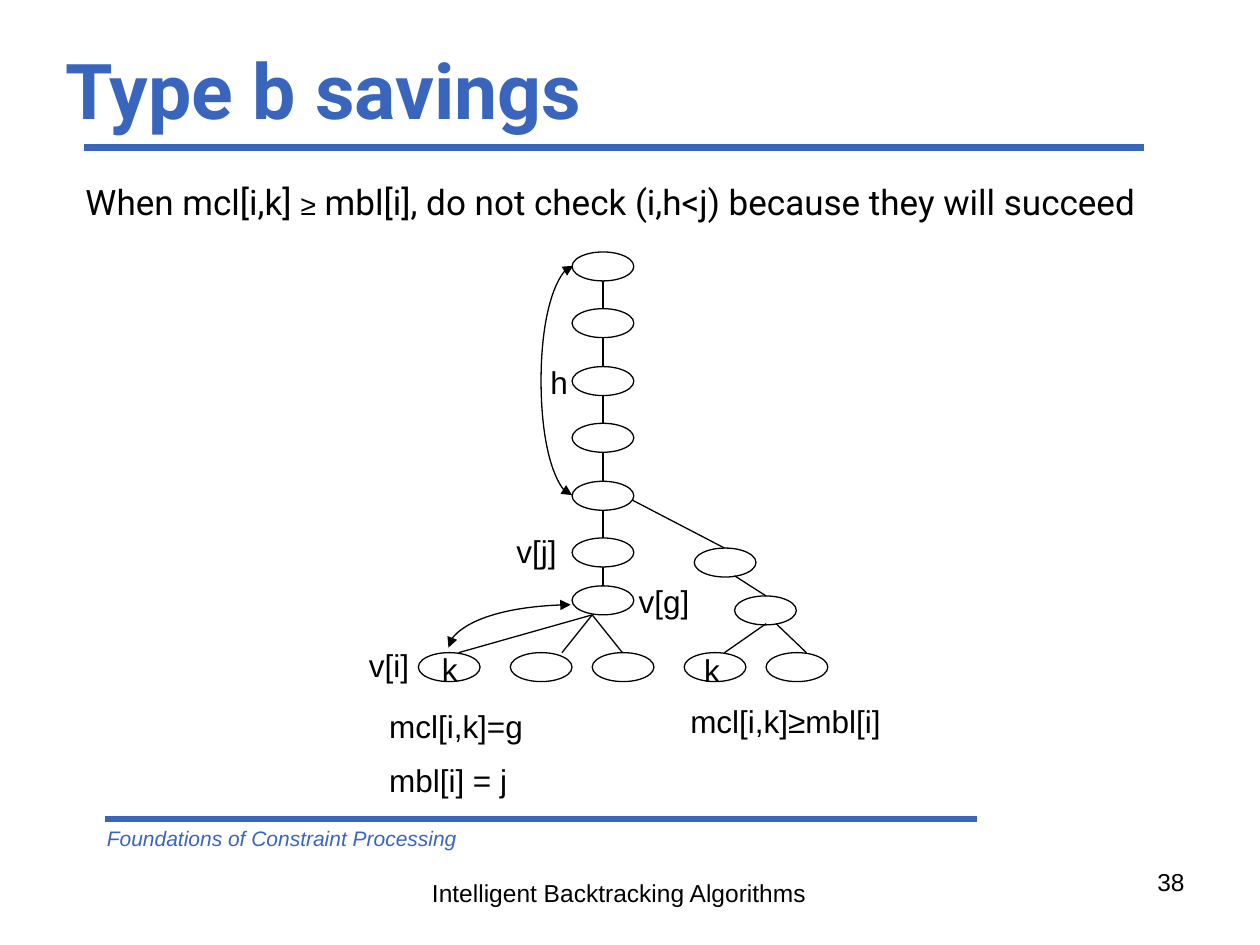
"""Builds the slide on type b savings in backtracking search."""
from lxml import etree
from pptx import Presentation
from pptx import util as u
from pptx.dml.color import RGBColor
from pptx.enum import shapes, text
from pptx.oxml.ns import qn

COLORS = {"blue": "3A65BC", "black": "000000"}
NODE_W, NODE_H = 0.49, 0.23
SPINE_X = 4.54
SPINE_TOPS = [2, 2.45, 2.91, 3.36, 3.82, 4.27, 4.65]
LEAF_TOP = 5.18
LEAF_LEFTS = [3.32, 4.05, 4.7, 5.43, 6.08]
BRANCH_NODES = [(5.51, 4.35), (5.83, 4.73)]
EDGES = [
    (4.7, 4.88, 3.64, LEAF_TOP),
    (4.7, 4.88, 4.46, LEAF_TOP),
    (4.7, 4.88, 4.94, LEAF_TOP),
    (5.02, 3.97, 5.75, 4.35),
    (5.83, 4.57, 6.08, 4.73),
    (6.08, 4.95, 5.75, LEAF_TOP),
    (6.16, 4.95, 6.4, LEAF_TOP),
]
RULES = [(0.67, 1.17, 9.08, 1.17), (0.83, 6.5, 7.75, 6.5)]
LABELS = [
    ("h", 4.27, 2.83, 0.34),
    ("v[i]", 2.83, 5.08, 0.52),
    ("v[j]", 4, 4.17, 0.52),
    ("v[g]", 4.97, 4.57, 0.6),
    ("k", 5.49, 5.12, 0.33),
    ("k", 3.41, 5.11, 0.33),
    ("mcl[i,k]≥mbl[i]", 5.38, 5.52, 1.71),
]
RESULTS = ["mcl[i,k]=g", "mbl[i] = j"]
STATEMENT = [
    ("When mcl[i,k] ", 20, "Roboto"),
    ("≥", 16, "Arial"),
    (" mbl[i], do not check (i,h<j) because they will succeed", 20, "Roboto"),
]


def style(font, size, name="Arial", color="black", bold=False, italic=False):
    font.size, font.name, font.bold, font.italic = u.Pt(size), name, bold, italic
    font.color.rgb = RGBColor.from_string(COLORS[color])


def add_text(s, lines, box, size=18, wrap=True, **look):
    tf = s.shapes.add_textbox(*map(u.Inches, box)).text_frame
    tf.word_wrap = wrap
    for i, line in enumerate(lines):
        p = tf.add_paragraph() if i else tf.paragraphs[0]
        p.text = line
        if i:
            p.space_before = u.Pt(9.5)
        style(p.font, size, **look)
    return tf


def add_node(s, left, top):
    sp = s.shapes.add_shape(shapes.MSO_SHAPE.OVAL, *map(u.Inches, (left, top, NODE_W, NODE_H)))
    sp.shadow.inherit = False
    sp.fill.background()
    sp.line.color.rgb = RGBColor.from_string(COLORS["black"])
    sp.line.width = u.Pt(0.75)


def add_line(s, ends, kind=shapes.MSO_CONNECTOR.STRAIGHT, color="black", width=0.75):
    line = s.shapes.add_connector(kind, *map(u.Inches, ends))
    line.line.color.rgb = RGBColor.from_string(COLORS[color])
    line.line.width = u.Pt(width)
    etree.SubElement(line._element.spPr, qn("a:effectLst"))
    return line


def add_curve(s, ends, preset, adjust=None):
    line = add_line(s, ends, shapes.MSO_CONNECTOR.CURVE)
    geom = line._element.spPr.find(qn("a:prstGeom"))
    geom.set("prst", preset)
    if adjust is not None:
        guides = geom.find(qn("a:avLst"))
        etree.SubElement(guides, qn("a:gd"), name="adj1", fmla=f"val {adjust}")
    ln = line.line._get_or_add_ln()
    for end in ("a:headEnd", "a:tailEnd"):
        etree.SubElement(ln, qn(end), type="triangle")


def main():
    prs = Presentation()
    prs.slide_width, prs.slide_height = u.Inches(10), u.Inches(7.5)
    s = prs.slides.add_slide(prs.slide_layouts[6])

    for rule in RULES:
        add_line(s, rule, color="blue", width=4)
    add_text(s, ["Foundations of Constraint Processing"], (0.75, 6.5, 5.25, 0.3),
             12, color="blue", italic=True)
    add_text(s, ["Intelligent Backtracking Algorithms"], (3.33, 6.92, 3.19, 0.34), 14)
    tf = add_text(s, ["38"], (7.17, 6.83, 2.33, 0.52), 14)
    tf.paragraphs[0].alignment = text.PP_ALIGN.RIGHT
    tf = add_text(s, ["Type b savings"], (0.42, 0.33, 9, 0.75), 44,
                  name="Roboto", color="blue", bold=True)
    tf.vertical_anchor = text.MSO_ANCHOR.MIDDLE

    spine = [(SPINE_X, top) for top in SPINE_TOPS]
    leaves = [(left, LEAF_TOP) for left in LEAF_LEFTS]
    for left, top in spine + leaves + BRANCH_NODES:
        add_node(s, left, top)
    middle = SPINE_X + NODE_W / 2
    links = [(middle, a + NODE_H, middle, b) for a, b in zip(SPINE_TOPS, SPINE_TOPS[1:])]
    for edge in links + EDGES:
        add_line(s, edge)
    add_curve(s, (4.53, 4.8, 3.56, 5.14), "curvedConnector2")
    add_curve(s, (4.54, 3.93, 4.55, 2.11), "curvedConnector3", -2500000)

    for label, left, top, width in LABELS:
        add_text(s, [label], (left, top, width, 0.4), wrap=False)
    add_text(s, RESULTS, (2.99, 5.56, 1.3, 0.85))

    tf = add_text(s, [""], (0.58, 1.38, 8.67, 0.45), 20, name="Roboto")
    for words, size, name in STATEMENT:
        r = tf.paragraphs[0].add_run()
        r.text = words
        style(r.font, size, name)
    prs.save("out.pptx")


if __name__ == "__main__":
    main()
